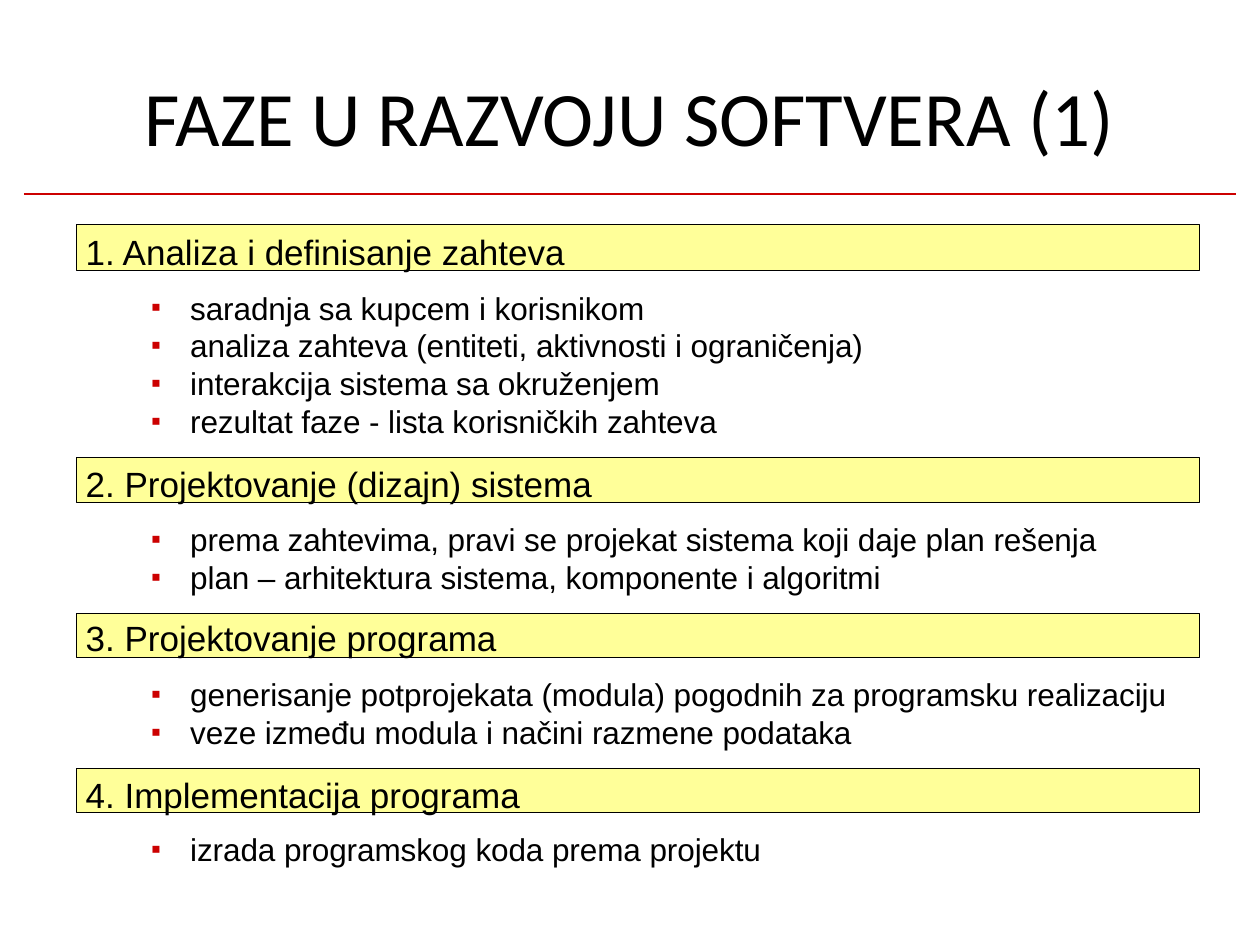
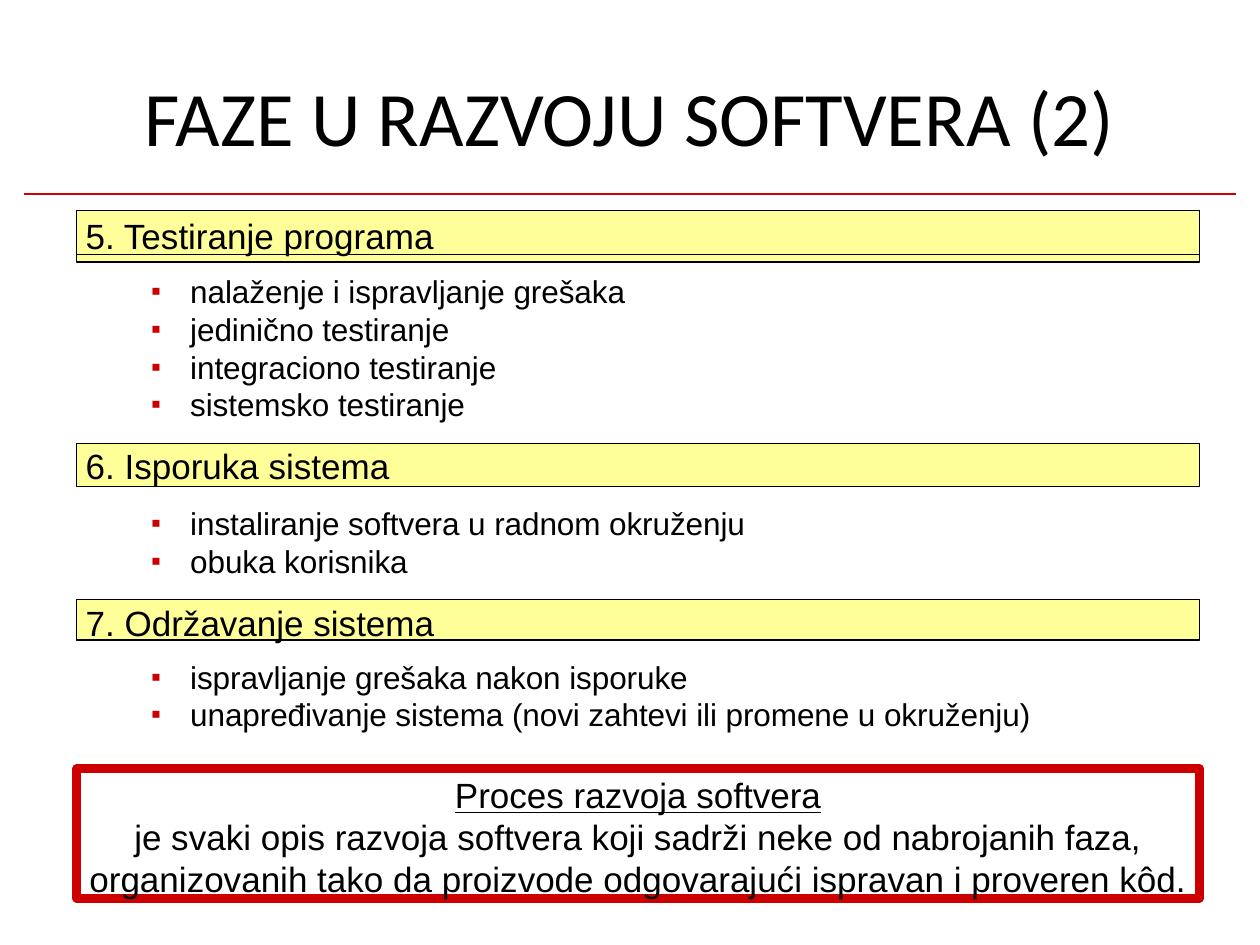
from lxml.etree import SubElement
from pptx import Presentation
from pptx.dml.color import RGBColor
from pptx.enum.shapes import MSO_CONNECTOR, MSO_SHAPE
from pptx.enum.text import MSO_ANCHOR, PP_ALIGN
from pptx.oxml.ns import qn
from pptx.util import Emu, Inches, Pt

BLACK, RED, YELLOW = "000000", "CC0000", "FFFF99"
WIDTH, HEIGHT = 10, 7.5
LEFT, COLUMN = 0.061 * WIDTH, 0.891 * WIDTH
BULLET_LEFT = 0.118 * WIDTH
BULLET_COLUMN = LEFT + COLUMN - BULLET_LEFT
BULLET_GAP, BULLET_ROW = 0.14, 0.3
RULE_TOP, RULE_MARGIN = 1.54, 0.19

PHASES = [
    [
        (1.78, 0.37, 0.05, "1. Analiza i definisanje zahteva", [
            "saradnja sa kupcem i korisnikom",
            "analiza zahteva (entiteti, aktivnosti i ograničenja)",
            "interakcija sistema sa okruženjem",
            "rezultat faze - lista korisničkih zahteva"]),
        (3.63, 0.36, 0.04, "2. Projektovanje (dizajn) sistema", [
            "prema zahtevima, pravi se projekat sistema koji daje plan rešenja",
            "plan – arhitektura sistema, komponente i algoritmi"]),
        (4.87, 0.35, 0.02, "3. Projektovanje programa", [
            "generisanje potprojekata (modula) pogodnih za programsku realizaciju",
            "veze između modula i načini razmene podataka"]),
        (6.1, 0.35, 0.04, "4. Implementacija programa", [
            "izrada programskog koda prema projektu"]),
    ],
    [
        (1.67, 0.35, 0.03, "5. Testiranje programa", [
            "nalaženje i ispravljanje grešaka",
            "jedinično testiranje",
            "integraciono testiranje",
            "sistemsko testiranje"]),
        (3.52, 0.34, 0.01, "6. Isporuka sistema", [
            "instaliranje softvera u radnom okruženju",
            "obuka korisnika"]),
        (4.76, 0.32, 0.01, "7. Održavanje sistema", [
            "ispravljanje grešaka nakon isporuke",
            "unapređivanje sistema (novi zahtevi ili promene u okruženju)"]),
    ],
]
DEFINITION = [
    "Proces razvoja softvera",
    "je svaki opis razvoja softvera koji sadrži neke od nabrojanih faza,",
    "organizovanih tako da proizvode odgovarajući ispravan i proveren kôd.",
]


def color(value):
    return RGBColor.from_string(value)


def add_block(slide, top, height, lines=(), size=20, left=LEFT, width=COLUMN,
              inset=0, align=PP_ALIGN.LEFT, fill=None, line=None, weight=0.72):
    block = slide.shapes.add_shape(MSO_SHAPE.RECTANGLE, Inches(left), Inches(top),
                                   Inches(width), Inches(height))
    block.shadow.inherit = False
    if fill:
        block.fill.solid()
        block.fill.fore_color.rgb = color(fill)
    else:
        block.fill.background()
    if line:
        block.line.color.rgb = color(line)
        block.line.width = Pt(weight)
    else:
        block.line.fill.background()
    frame = block.text_frame
    frame.word_wrap = True
    frame.vertical_anchor = MSO_ANCHOR.TOP
    frame.margin_left = frame.margin_right = frame.margin_bottom = 0
    frame.margin_top = Inches(inset)
    frame.text = "\n".join(lines)
    for paragraph in frame.paragraphs:
        paragraph.alignment = align
        for run in paragraph.runs:
            run.font.size = Pt(size)
            run.font.name = "Arial"
            run.font.color.rgb = color(BLACK)
    return frame


deck = Presentation()
deck.slide_width, deck.slide_height = Inches(WIDTH), Inches(HEIGHT)

for number, phases in enumerate(PHASES, 1):
    slide = deck.slides.add_slide(deck.slide_layouts[5])
    title = slide.shapes.title
    title.left, title.top = Inches(0.05 * WIDTH), Inches(0.55)
    title.width, title.height = Inches(0.9 * WIDTH), Inches(0.74)
    heading = title.text_frame
    heading.text = f"FAZE U RAZVOJU SOFTVERA ({number})"
    heading.vertical_anchor = MSO_ANCHOR.MIDDLE
    heading.margin_left = heading.margin_right = Emu(0)
    heading.margin_top = heading.margin_bottom = Emu(0)
    heading.paragraphs[0].alignment = PP_ALIGN.CENTER
    title_font = heading.paragraphs[0].runs[0].font
    title_font.name, title_font.size = "Calibri", Pt(44)
    title_font.color.rgb = color(BLACK)

    rule = slide.shapes.add_connector(
        MSO_CONNECTOR.STRAIGHT, Inches(RULE_MARGIN), Inches(RULE_TOP),
        Inches(WIDTH - RULE_MARGIN), Inches(RULE_TOP))
    rule.line.color.rgb = color(RED)
    rule.line.width = Pt(0.96)
    SubElement(rule._element.spPr, qn("a:effectLst"))

    if number == 2:
        add_block(slide, phases[0][0], 0.41, fill=YELLOW, line=BLACK)

    for top, height, inset, phase, activities in phases:
        phase_text = add_block(slide, top, height, [phase], inset=inset,
                               fill=YELLOW, line=BLACK)
        phase_text.margin_left = Inches(0.07)
        activity_text = add_block(
            slide, top + height + BULLET_GAP, BULLET_ROW * len(activities),
            activities, size=18, left=BULLET_LEFT, width=BULLET_COLUMN)
        for paragraph in activity_text.paragraphs:
            properties = paragraph._p.get_or_add_pPr()
            properties.set("marL", str(Inches(0.33)))
            properties.set("indent", str(-Inches(0.31)))
            bullet_color = SubElement(properties, qn("a:buClr"))
            SubElement(bullet_color, qn("a:srgbClr"), val=RED)
            SubElement(properties, qn("a:buSzPct"), val="89000")
            SubElement(properties, qn("a:buFont"), typeface="Arial")
            SubElement(properties, qn("a:buChar"), char="▪")
            for run in paragraph.runs:
                run._r.get_or_add_rPr().set("spc", "-5")

definition = add_block(slide, 6.1, 1.03, DEFINITION, inset=0.04,
                       align=PP_ALIGN.CENTER, line=RED, weight=5.04)
definition.paragraphs[0].runs[0].font.underline = True

deck.save("out.pptx")
